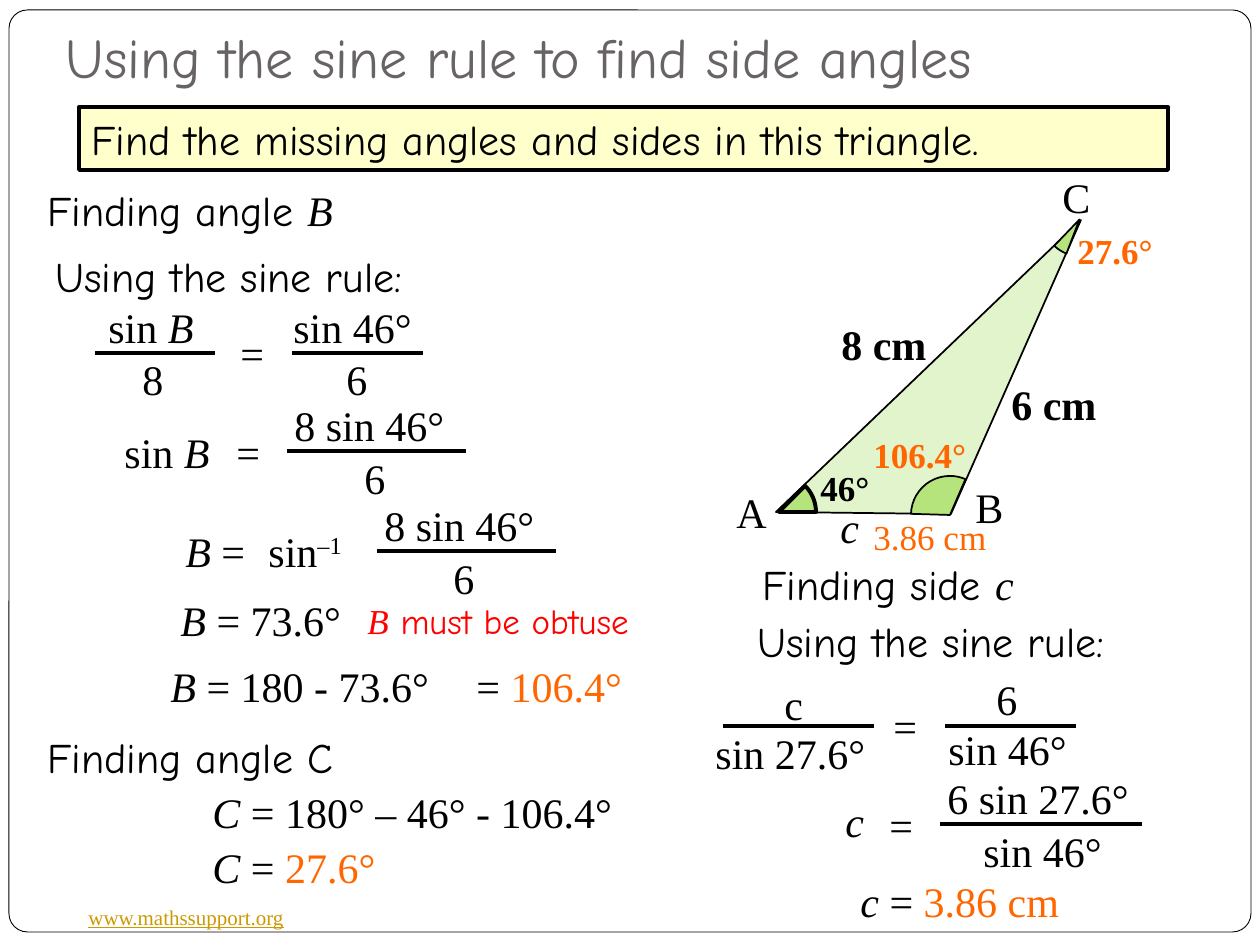
"""Build a worked example of the sine rule for missing angles and sides."""
import math
from dataclasses import dataclass

import lxml.etree
import pptx
import pptx.dml.color
import pptx.enum.shapes
import pptx.enum.text
import pptx.oxml.ns
import pptx.util

SERIF, HAND = "Times New Roman", "Comic Neue"
BLACK, ORANGE, RED, GOLD, GREY = "000000", "FF6600", "FF0000", "CC9900", "696464"
PALE_GREEN, GREEN, CREAM, WHITE = "E2F4CB", "B5E47C", "FFFFCC", "FFFFFF"
SHAPE = pptx.enum.shapes.MSO_SHAPE
AUTO_SIZE = pptx.enum.text.MSO_AUTO_SIZE


@dataclass(frozen=True)
class Run:
    text: str
    font: str = SERIF
    color: str = BLACK
    italic: bool = False
    bold: bool = False
    underline: bool = False
    raised: bool = False


@dataclass(frozen=True)
class Label:
    x: int
    y: int
    width: int
    runs: tuple
    size: int = 24


@dataclass(frozen=True)
class Term:
    x: int
    width: int
    runs: tuple
    rise: int


@dataclass(frozen=True)
class Fraction:
    left: int
    right: int
    y: int
    numerator: Term
    denominator: Term


def px(length: float) -> pptx.util.Emu:
    """Turn px into EMU."""
    return pptx.util.Emu(round(length * 914400 / 126))


def rgb(value: str) -> pptx.dml.color.RGBColor:
    """Return the colour for a hex string."""
    return pptx.dml.color.RGBColor.from_string(value)


def plain(text: str, color: str = BLACK, **style) -> tuple:
    """Return one serif run."""
    return (Run(text, color=color, **style),)


def hand(text: str, color: str = BLACK) -> tuple:
    """Return one handwritten run."""
    return (Run(text, HAND, color),)


def symbol(text: str, color: str = BLACK) -> tuple:
    """Return one italic run for a variable."""
    return (Run(text, color=color, italic=True),)


def add_runs(frame, runs: tuple, size: int) -> None:
    """Write runs into the first paragraph of a frame."""
    paragraph = frame.paragraphs[0]
    paragraph.alignment = pptx.enum.text.PP_ALIGN.LEFT
    for part in runs:
        run = paragraph.add_run()
        run.text = part.text
        run.font.name = part.font
        run.font.size = pptx.util.Pt(size)
        run.font.color.rgb = rgb(part.color)
        run.font.italic, run.font.bold = part.italic, part.bold
        run.font.underline = part.underline
        if part.raised:
            run._r.get_or_add_rPr().set("baseline", "30000")


def draw_label(slide, label: Label) -> None:
    """Draw a one-line text box that fits its text."""
    height = {24: 64, 20: 55, 12: 38}[label.size]
    box = slide.shapes.add_textbox(px(label.x), px(label.y), px(label.width), px(height))
    box.text_frame.word_wrap = False
    box.text_frame.auto_size = AUTO_SIZE.SHAPE_TO_FIT_TEXT
    add_runs(box.text_frame, label.runs, label.size)


def draw_fraction(slide, fraction: Fraction) -> None:
    """Draw a bar with a term above and a term below it."""
    bar = slide.shapes.add_connector(
        pptx.enum.shapes.MSO_CONNECTOR.STRAIGHT,
        px(fraction.left), px(fraction.y), px(fraction.right), px(fraction.y))
    bar.line.color.rgb = rgb(BLACK)
    bar.line.width = pptx.util.Pt(2.25)
    lxml.etree.SubElement(bar._element.spPr, pptx.oxml.ns.qn("a:effectLst"))
    for term in (fraction.numerator, fraction.denominator):
        draw_label(slide, Label(term.x, fraction.y - term.rise, term.width, term.runs))


def paint(shape, fill: str, weight: float):
    """Give a shape a flat fill and a black outline."""
    shape.shadow.inherit = False
    shape.fill.solid()
    shape.fill.fore_color.rgb = rgb(fill)
    shape.line.color.rgb = rgb(BLACK)
    shape.line.width = pptx.util.Pt(weight)
    return shape


def draw_preset(slide, kind, x: int, y: int, width: int, height: int, fill: str, weight: float):
    """Draw a preset shape."""
    return paint(slide.shapes.add_shape(kind, px(x), px(y), px(width), px(height)), fill, weight)


def draw_outline(slide, points: list, fill: str, weight: float) -> None:
    """Draw a closed polygon."""
    corners = [(px(x), px(y)) for x, y in points]
    builder = slide.shapes.build_freeform(*corners[0])
    builder.add_line_segments(corners[1:], close=True)
    paint(builder.convert_to_shape(), fill, weight)


def draw_angle(slide, x: int, y: int, size: int, start: float, end: float) -> None:
    """Draw an angle sector between two directions in degrees."""
    sector = draw_preset(slide, SHAPE.PIE, x, y, size, size, GREEN, 1)
    for index, degrees in enumerate((start, end)):
        sector.adjustments[index] = degrees * 0.6


def draw_title(slide) -> None:
    """Place and format the title."""
    title = slide.shapes.title
    title.left, title.top, title.width, title.height = px(53), px(23), px(1134), px(79)
    frame = title.text_frame
    frame.auto_size = AUTO_SIZE.NONE
    frame.vertical_anchor = pptx.enum.text.MSO_ANCHOR.BOTTOM
    frame.margin_bottom = pptx.util.Inches(0.1)
    add_runs(frame, hand("Using the sine rule to find side angles", GREY), 32)


SIN_B = plain("sin ") + symbol("B")
SIN_46, SIN_27 = plain("sin 46°"), plain("sin 27.6°")
EQUALS, SIX = plain("="), plain("6")
RULE = hand("Using the sine rule:")

FRACTIONS = [
    Fraction(95, 215, 353, Term(96, 118, SIN_B, 58), Term(130, 52, plain("8"), 6)),
    Fraction(292, 423, 353, Term(281, 161, SIN_46, 58), Term(334, 52, SIX, 6)),
    Fraction(287, 466, 451, Term(282, 200, plain("8 sin 46°"), 58), Term(352, 52, SIX, 5)),
    Fraction(377, 556, 551, Term(372, 200, plain("8 sin 46°"), 58), Term(441, 52, SIX, 5)),
    Fraction(723, 874, 726, Term(772, 47, plain("c"), 54), Term(703, 198, SIN_27, 5)),
    Fraction(945, 1076, 726, Term(984, 52, SIX, 59), Term(936, 161, SIN_46, 9)),
    Fraction(940, 1142, 824, Term(935, 237, plain("6 sin 27.6°"), 58), Term(971, 161, SIN_46, 5)),
]

LABELS = [
    Label(76, 898, 223, plain("www.mathssupport.org", GOLD, underline=True), 12),
    Label(35, 178, 320, hand("Finding angle ") + symbol("B")),
    Label(43, 244, 407, RULE),
    Label(228, 321, 47, EQUALS),
    Label(112, 420, 118, SIN_B),
    Label(224, 420, 47, EQUALS),
    Label(173, 519, 87, symbol("B ") + EQUALS),
    Label(256, 519, 106, plain("sin") + plain("–1", raised=True)),
    Label(168, 588, 202, symbol("B ") + plain("= 73.6°")),
    Label(355, 593, 311, symbol("B", RED) + hand(" must be obtuse", RED), 20),
    Label(158, 654, 315, symbol("B ") + plain("= 180 - 73.6°")),
    Label(464, 654, 184, plain("= ") + plain("106.4°", ORANGE)),
    Label(35, 725, 320, hand("Finding angle C")),
    Label(200, 780, 466, symbol("C ") + plain("= 180° – 46° - 106.4°")),
    Label(200, 835, 204, symbol("C ") + plain("= ") + plain("27.6°", ORANGE)),
    Label(750, 552, 295, hand("Finding side ") + symbol("c")),
    Label(745, 609, 407, RULE),
    Label(881, 694, 47, EQUALS),
    Label(833, 789, 44, symbol("c")),
    Label(877, 793, 47, EQUALS),
    Label(848, 869, 243, symbol("c ") + plain("= ") + plain("3.86 cm", ORANGE)),
    Label(724, 480, 57, plain("A")),
    Label(963, 475, 53, plain("B")),
    Label(1050, 165, 50, plain("C")),
    Label(829, 312, 125, plain("8 cm", bold=True)),
    Label(999, 372, 125, plain("6 cm", bold=True)),
    Label(828, 495, 44, symbol("c")),
    Label(808, 460, 83, plain("46°", bold=True), 20),
    Label(861, 427, 141, plain("106.4°", ORANGE, bold=True), 20),
    Label(1065, 223, 120, plain("27.6°", ORANGE, bold=True), 20),
    Label(861, 509, 155, plain("3.86 cm", ORANGE), 20),
]


def main() -> None:
    """Build and save the slide."""
    deck = pptx.Presentation()
    deck.slide_width, deck.slide_height = px(1260), px(945)
    slide = deck.slides.add_slide(deck.slide_layouts[5])
    frame = draw_preset(slide, SHAPE.ROUNDED_RECTANGLE, 9, 10, 1242, 922, WHITE, 0.5)
    frame.adjustments[0] = 0.02
    slide.shapes._spTree.insert(2, frame._element)
    draw_title(slide)
    task = draw_preset(slide, SHAPE.RECTANGLE, 79, 107, 1089, 63, CREAM, 2.25)
    add_runs(task.text_frame, hand("Find the missing angles and sides in this triangle."), 24)
    draw_outline(slide, [(776, 512), (951, 514), (1081, 220)], PALE_GREEN, 1)
    arc = [(779 + 37 * math.cos(math.radians(a)), 512 - 37 * math.sin(math.radians(a)))
           for a in range(0, 46, 5)]
    draw_outline(slide, [(779, 512)] + arc, GREEN, 2.25)
    draw_angle(slide, 911, 476, 78, 181.61, 293.45)
    draw_angle(slide, 1043, 183, 73, 110.92, 133.77)
    for fraction in FRACTIONS:
        draw_fraction(slide, fraction)
    for label in LABELS:
        draw_label(slide, label)
    deck.save("out.pptx")


if __name__ == "__main__":
    main()
